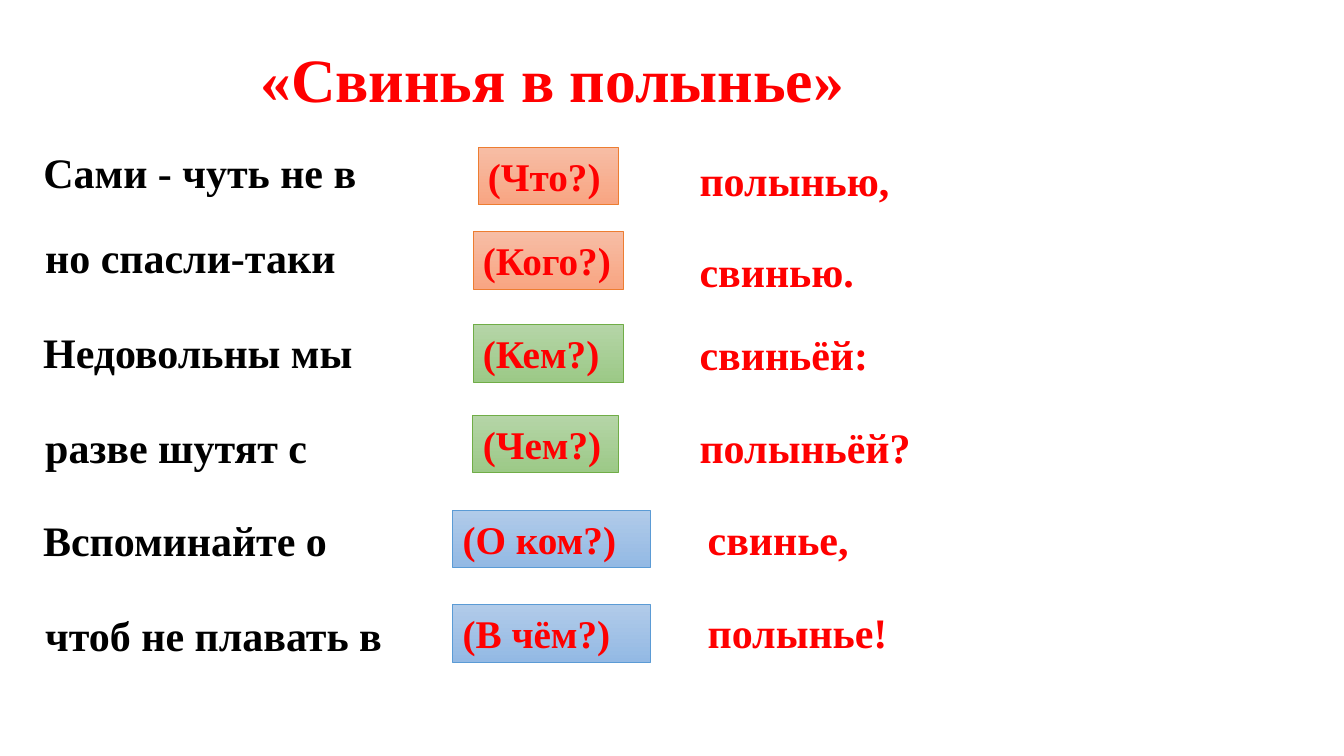
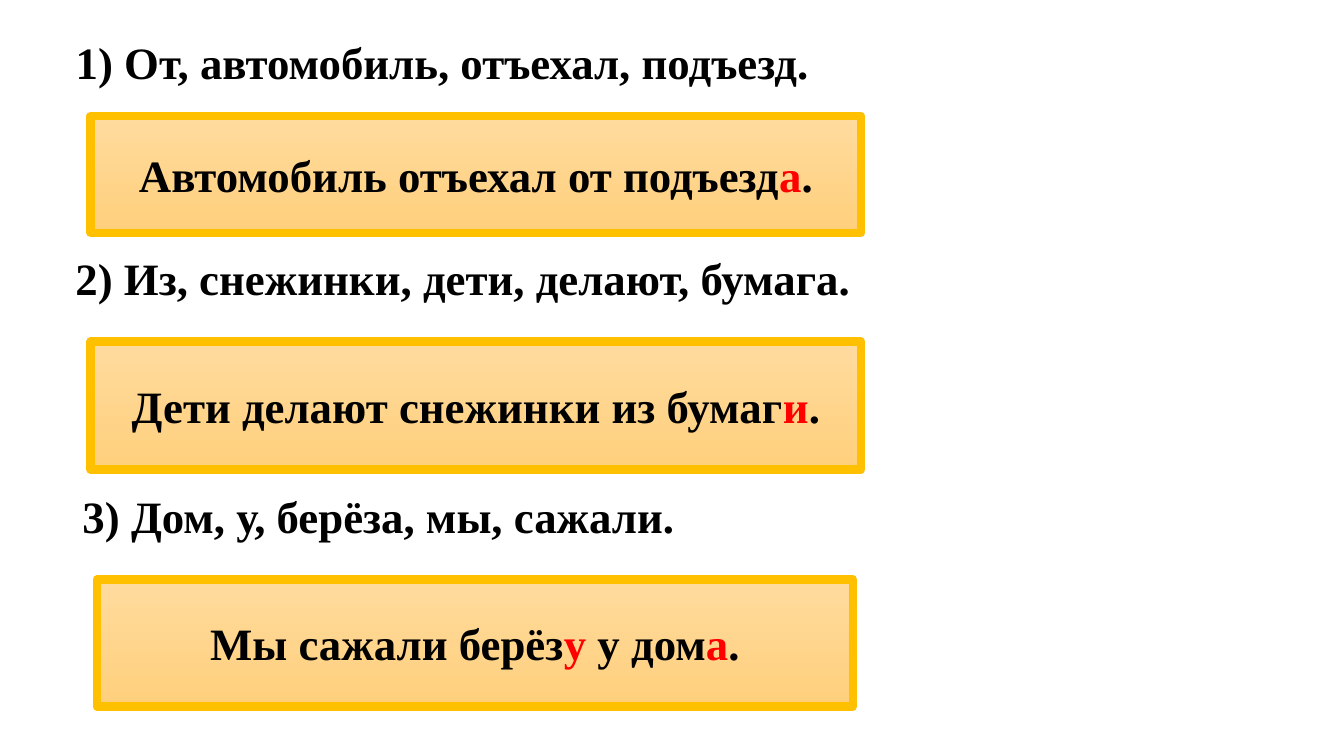
from lxml import etree
from pptx import Presentation
from pptx import util as u
from pptx.dml.color import RGBColor
from pptx.enum import shapes, text
from pptx.oxml.ns import qn

FONT = "Times New Roman"
COLORS = {"black": "000000", "red": "FF0000"}
FILLS = {
    "orange": ("F7BDA5", "F8A582", "ED7D31"),
    "green": ("B5D5A7", "9CC987", "70AD47"),
    "blue": ("B1CBE9", "93B9E4", "5B9BD5"),
    "gold": ("FFDB9E", "FFD07C", "FFC000"),
}


def write(sp, words, size=30, color="black", align="LEFT", anchor="TOP", spacing=1.0):
    tf = sp.text_frame
    tf.word_wrap = True
    tf.auto_size = text.MSO_AUTO_SIZE.NONE
    tf.vertical_anchor = text.MSO_ANCHOR[anchor]
    p = tf.paragraphs[0]
    pPr = p._p.get_or_add_pPr()
    pPr.set("marL", "0")
    pPr.set("indent", "0")
    etree.SubElement(pPr, qn("a:buNone"))
    p.alignment = text.PP_ALIGN[align]
    p.line_spacing = spacing
    p.space_before = u.Pt(0)
    for i, part in enumerate(words.split("*")):
        r = p.add_run()
        r.text = part
        r.font.name = FONT
        r.font.size = u.Pt(size)
        r.font.bold = True
        r.font.color.rgb = RGBColor.from_string(COLORS["red" if i % 2 else color])


def add_box(s, at, fill, line_width):
    sp = s.shapes.add_shape(shapes.MSO_SHAPE.RECTANGLE, *map(u.Inches, at))
    sp.shadow.inherit = False
    top, bottom, line = map(RGBColor.from_string, FILLS[fill])
    sp.fill.gradient()
    sp.fill.gradient_angle = 270
    for stop, rgb, position in zip(sp.fill.gradient_stops, (top, bottom), (0, 1)):
        stop.color.rgb = rgb
        stop.position = position
    sp.line.color.rgb = line
    sp.line.width = u.Pt(line_width)
    return sp


prs = Presentation()
prs.slide_width = u.Inches(13.33)
prs.slide_height = u.Inches(7.5)
layout = prs.slide_layouts[1]

s = prs.slides.add_slide(layout)
title, body = s.placeholders
title.left, title.top, title.width, title.height = map(u.Inches, (2.31, 0.19, 6.34, 1.25))
write(title, "«Свинья в полынье»", size=44, color="red", align="CENTER", anchor="MIDDLE", spacing=0.9)

rows = [
    ("Сами - чуть не в", 0.33, 1.46, "(Что?)", 4.74, 1.46, 1.39, "orange", "полынью,", 6.84, 1.48),
    ("но спасли-таки", 0.35, 2.25, "(Кого?)", 4.69, 2.3, 1.49, "orange", "свинью.", 6.84, 2.39),
    ("Недовольны мы", 0.33, 3.19, "(Кем?)", 4.69, 3.22, 1.49, "green", "свиньёй:", 6.84, 3.21),
    ("разве шутят с", 0.35, 4.13, "(Чем?)", 4.69, 4.12, 1.44, "green", "полыньёй?", 6.84, 4.13),
    ("Вспоминайте о", 0.33, 5.06, "(О ком?)", 4.49, 5.06, 1.96, "blue", "свинье,", 6.92, 5.05),
    ("чтоб не плавать в", 0.35, 6, "(В чём?)", 4.49, 6, 1.96, "blue", "полынье!", 6.92, 5.97),
]
for i, (start, x, y, question, qx, qy, qw, fill, ending, ex, ey) in enumerate(rows):
    place = [u.Inches(v) for v in (x, y, 3.93, 0.61)]
    if i == 0:
        sp = body
        sp.left, sp.top, sp.width, sp.height = place
    else:
        sp = s.shapes.add_textbox(*place)
    write(sp, start, spacing=0.9 if i == 0 else 1.0)
    write(add_box(s, (qx, qy, qw, 0.57), fill, 0.5), question, size=28, color="red")
    sp = s.shapes.add_textbox(*map(u.Inches, (ex, ey, 2.31, 0.61)))
    write(sp, ending, color="red")

s = prs.slides.add_slide(layout)
title, body = s.placeholders
title.element.getparent().remove(title.element)

tasks = [
    ("1) От, автомобиль, отъехал, подъезд.", (0.65, 0.35, 8.25, 0.89),
     "Автомобиль отъехал от подъезд*а*.", (0.9, 1.15, 7.64, 1.16)),
    ("2) Из, снежинки, дети, делают, бумага.", (0.65, 2.5, 8.53, 0.89),
     "Дети делают снежинки из бумаг*и*.", (0.9, 3.39, 7.64, 1.27)),
    ("3) Дом, у, берёза, мы, сажали.", (0.72, 4.86, 6.54, 0.89),
     "Мы сажали берёз*у* у дом*а*.", (0.96, 5.75, 7.5, 1.26)),
]
for i, (task, task_at, answer, answer_at) in enumerate(tasks):
    place = [u.Inches(v) for v in task_at]
    if i == 0:
        sp = body
        sp.left, sp.top, sp.width, sp.height = place
    else:
        sp = s.shapes.add_textbox(*place)
    write(sp, task, size=32, spacing=0.9)
    write(add_box(s, answer_at, "gold", 6), answer, size=32, align="CENTER", anchor="MIDDLE")

prs.save("out.pptx")
